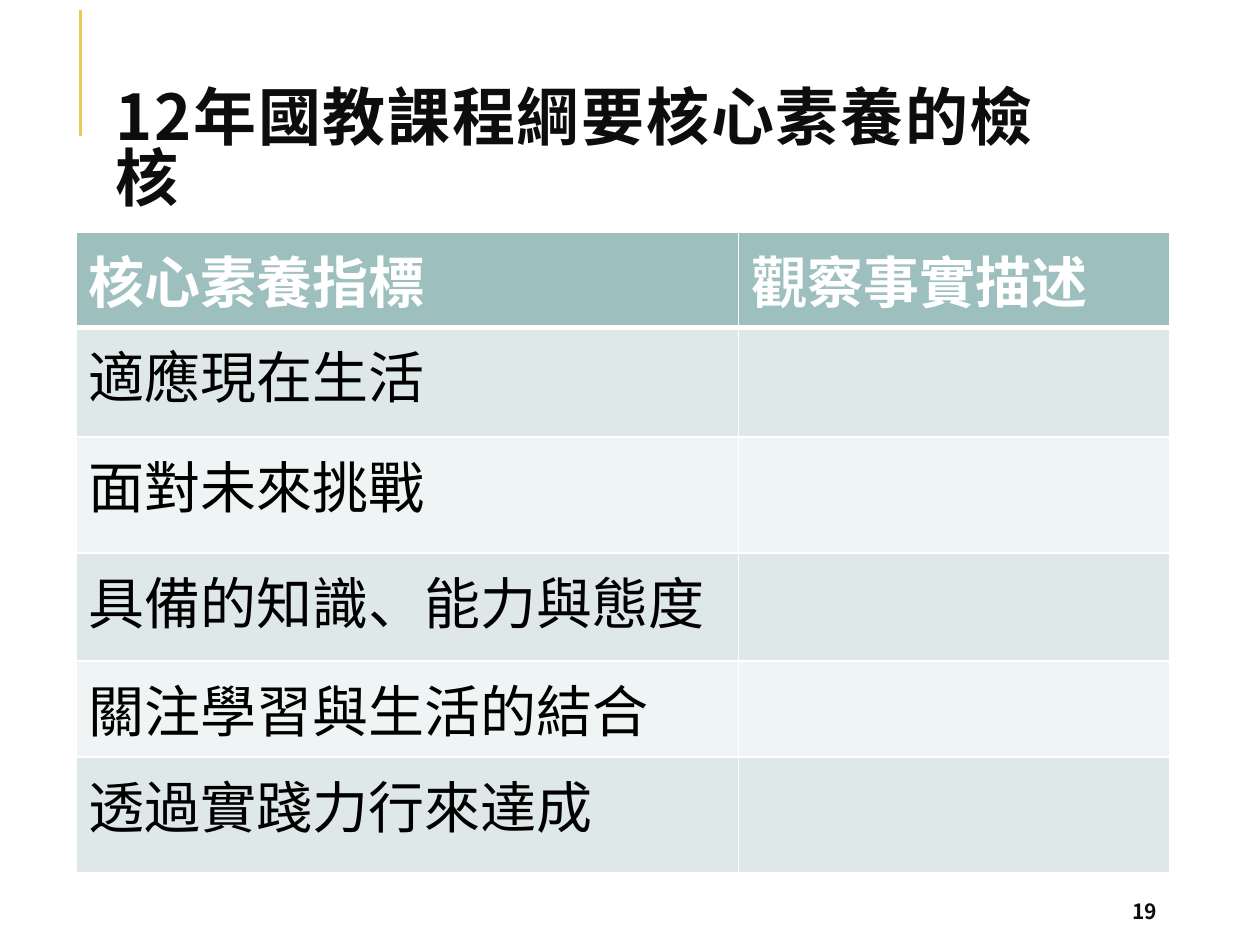
from lxml import etree
from pptx import Presentation
from pptx.dml.color import RGBColor
from pptx.enum.shapes import MSO_CONNECTOR
from pptx.enum.text import MSO_ANCHOR
from pptx.oxml.ns import qn
from pptx.util import Pt

LINE = MSO_CONNECTOR.STRAIGHT
MIDDLE = MSO_ANCHOR.MIDDLE
FONT = "Noto Sans CJK SC"
INK = "0D0D0D"
WHITE = "FFFFFF"
HEAD = "9DBFBE"
BANDS = ["EFF4F4", "DFE8E8"]


def color(code):
    return RGBColor.from_string(code)


def style(frame, size, code, bold):
    """Format all runs, setting the font for Latin and East Asian text."""
    for para in frame.paragraphs:
        for run in para.runs:
            font = run.font
            font.name = FONT
            font.size = Pt(size)
            font.bold = bold
            font.color.rgb = color(code)
            props = run._r.get_or_add_rPr()
            etree.SubElement(props, qn("a:ea"), typeface=FONT)


deck = Presentation()
deck.slide_width = Pt(720)
deck.slide_height = Pt(540)
slide = deck.slides.add_slide(deck.slide_layouts[6])
shapes = slide.shapes

# Accent line
accent = shapes.add_connector(LINE, Pt(46), Pt(77.8), Pt(46), Pt(5.8))
accent.line.color.rgb = color("E3CC5A")
accent.line.width = Pt(1.5)
etree.SubElement(accent._element.spPr, qn("a:effectLst"))

# Title and page number
labels = [
    ("12年國教課程綱要核心素養的檢核", 59, 51.1, 573.8, 72.7, 36),
    ("19", 640, 509.8, 57.6, 21.6, 12),
]
for text, left, top, width, height, size in labels:
    box = shapes.add_textbox(Pt(left), Pt(top), Pt(width), Pt(height))
    frame = box.text_frame
    frame.word_wrap = True
    frame.vertical_anchor = MIDDLE
    frame.text = text
    style(frame, size, INK, True)
    if size == 36:
        para = frame.paragraphs[0]
        para.line_spacing = 0.8
        para.runs[0]._r.get_or_add_rPr().set("spc", "100")

# Checklist table
rows = [
    (("核心素養指標", "觀察事實描述"), 54.7),
    (("適應現在生活", ""), 62.6),
    (("面對未來挑戰", ""), 66.2),
    (("具備的知識、能力與態度", ""), 61.9),
    (("關注學習與生活的結合", ""), 54.7),
    (("透過實踐力行來達成", ""), 66.2),
]
widths = [378.7, 246.2]
total = sum(height for _, height in rows)
table = shapes.add_table(
    len(rows), len(widths), Pt(43.4), Pt(132.5), Pt(sum(widths)), Pt(total)
).table
for col, width in zip(table.columns, widths):
    col.width = Pt(width)

for r, (texts, height) in enumerate(rows):
    table.rows[r].height = Pt(height)
    for c, text in enumerate(texts):
        cell = table.cell(r, c)
        cell.fill.solid()
        cell.fill.fore_color.rgb = color(BANDS[r % 2] if r else HEAD)
        if text:
            cell.text_frame.text = text
            style(cell.text_frame, 32, "000000" if r else WHITE, r == 0)
        edges = {"L": 1, "R": 1, "T": 3 if r == 1 else 1, "B": 1 if r else 3}
        props = cell._tc.get_or_add_tcPr()
        for i, (side, width) in enumerate(edges.items()):
            edge = etree.Element(qn("a:ln" + side), w=str(Pt(width)))
            fill = etree.SubElement(edge, qn("a:solidFill"))
            etree.SubElement(fill, qn("a:srgbClr"), val=WHITE)
            props.insert(i, edge)

deck.save("out.pptx")
